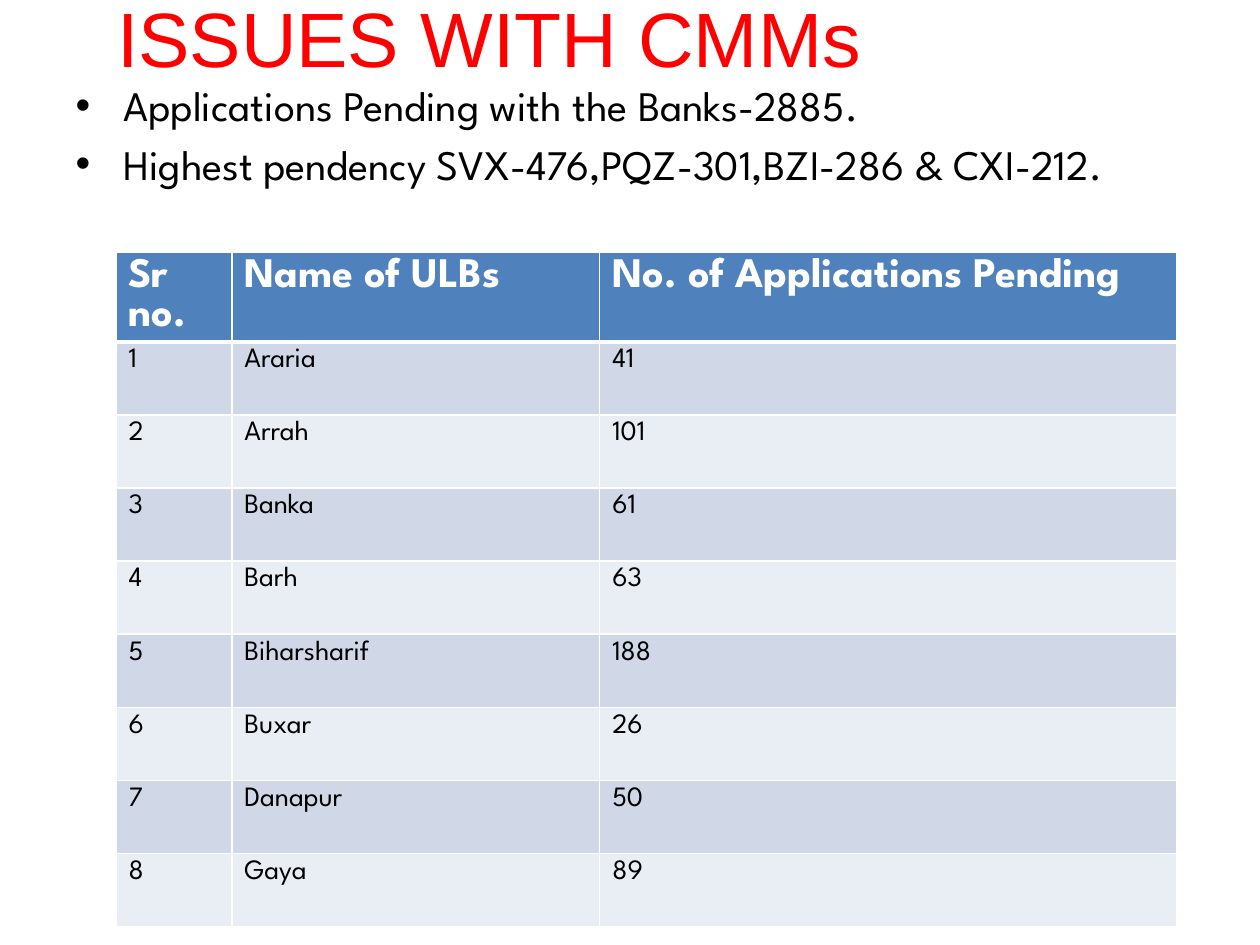
"""Build the slide on pending applications by urban local body."""
from dataclasses import dataclass

from lxml.etree import SubElement
from pptx import Presentation
from pptx.dml.color import RGBColor
from pptx.enum.text import MSO_ANCHOR, PP_ALIGN
from pptx.oxml.ns import qn
from pptx.util import Inches, Pt

COLORS = {
    "title": "FF0000",
    "text": "000000",
    "white": "FFFFFF",
    "header": "4F81BD",
    "odd": "D0D8E8",
    "even": "E9EDF4",
}
BODY_FONT = "League Spartan"
BULLETS = [
    "Applications Pending with the Banks-2885.",
    "Highest pendency SVX-476,PQZ-301,BZI-286 & CXI-212.",
]
HEADINGS = ["Sr no.", "Name of ULBs", "No. of Applications Pending"]
COLUMN_WIDTHS = [0.92, 2.92, 4.58]
ROW_HEIGHT = 0.58


@dataclass
class PendingCount:
    town: str
    applications: int


@dataclass
class CellStyle:
    size: int
    color: str
    fill: str
    bold: bool = False
    top_line: float = 1
    bottom_line: float = 1


PENDING = [
    PendingCount("Araria", 41),
    PendingCount("Arrah", 101),
    PendingCount("Banka", 61),
    PendingCount("Barh", 63),
    PendingCount("Biharsharif", 188),
    PendingCount("Buxar", 26),
    PendingCount("Danapur", 50),
    PendingCount("Gaya", 89),
]


def place(shape, left: float, top: float, width: float, height: float) -> None:
    shape.left, shape.top = Inches(left), Inches(top)
    shape.width, shape.height = Inches(width), Inches(height)


def add_span(para, text: str, size: int, color: str, font: str = BODY_FONT, bold: bool = False) -> None:
    span = para.add_run()
    span.text = text
    span.font.name = font
    span.font.size = Pt(size)
    span.font.bold = bold
    span.font.color.rgb = RGBColor.from_string(COLORS[color])


def add_bullet(para) -> None:
    properties = para._p.get_or_add_pPr()
    properties.set("marL", str(Inches(0.38)))
    properties.set("indent", str(-Inches(0.38)))
    SubElement(properties, qn("a:buFont"), typeface="Arial")
    SubElement(properties, qn("a:buChar"), char="•")


def set_borders(cell, style: CellStyle) -> None:
    properties = cell._tc.get_or_add_tcPr()
    sides = {"lnL": 1, "lnR": 1, "lnT": style.top_line, "lnB": style.bottom_line}
    for side, width in sides.items():
        line = SubElement(properties, qn(f"a:{side}"), w=str(Pt(width)))
        fill = SubElement(line, qn("a:solidFill"))
        SubElement(fill, qn("a:srgbClr"), val=COLORS["white"])


def fill_row(table, row: int, values: list[str], style: CellStyle) -> None:
    table.rows[row].height = Inches(ROW_HEIGHT)
    for column, value in enumerate(values):
        cell = table.cell(row, column)
        set_borders(cell, style)
        cell.fill.solid()
        cell.fill.fore_color.rgb = RGBColor.from_string(COLORS[style.fill])
        add_span(cell.text_frame.paragraphs[0], value, style.size, style.color, bold=style.bold)


def add_title(page) -> None:
    title = page.shapes.title
    place(title, 0.83, -0.08, 9, 0.75)
    title.text_frame.vertical_anchor = MSO_ANCHOR.MIDDLE
    para = title.text_frame.paragraphs[0]
    para.alignment = PP_ALIGN.LEFT
    add_span(para, "ISSUES WITH CMMs", 44, "title", "Arial")


def add_bullets(page) -> None:
    body = page.placeholders[1]
    place(body, 0.5, 0.58, 9, 4.95)
    frame = body.text_frame
    for index, text in enumerate(BULLETS):
        para = frame.add_paragraph() if index else frame.paragraphs[0]
        para.space_before = Pt(4.8 if index else 0)
        add_bullet(para)
        add_span(para, text, 24, "text")


def add_pending_table(page) -> None:
    row_count = len(PENDING) + 1
    table = page.shapes.add_table(
        row_count, len(HEADINGS), Inches(0.92), Inches(2),
        Inches(sum(COLUMN_WIDTHS)), Inches(ROW_HEIGHT * row_count),
    ).table
    for column, width in zip(table.columns, COLUMN_WIDTHS):
        column.width = Inches(width)
    fill_row(table, 0, HEADINGS, CellStyle(24, "white", "header", bold=True, bottom_line=3))
    for number, entry in enumerate(PENDING, start=1):
        style = CellStyle(16, "text", "odd" if number % 2 else "even", top_line=3 if number == 1 else 1)
        fill_row(table, number, [str(number), entry.town, str(entry.applications)], style)


def main() -> None:
    deck = Presentation()
    deck.slide_width, deck.slide_height = Inches(10), Inches(7.5)
    page = deck.slides.add_slide(deck.slide_layouts[1])
    add_title(page)
    add_bullets(page)
    add_pending_table(page)
    deck.save("out.pptx")


if __name__ == "__main__":
    main()
